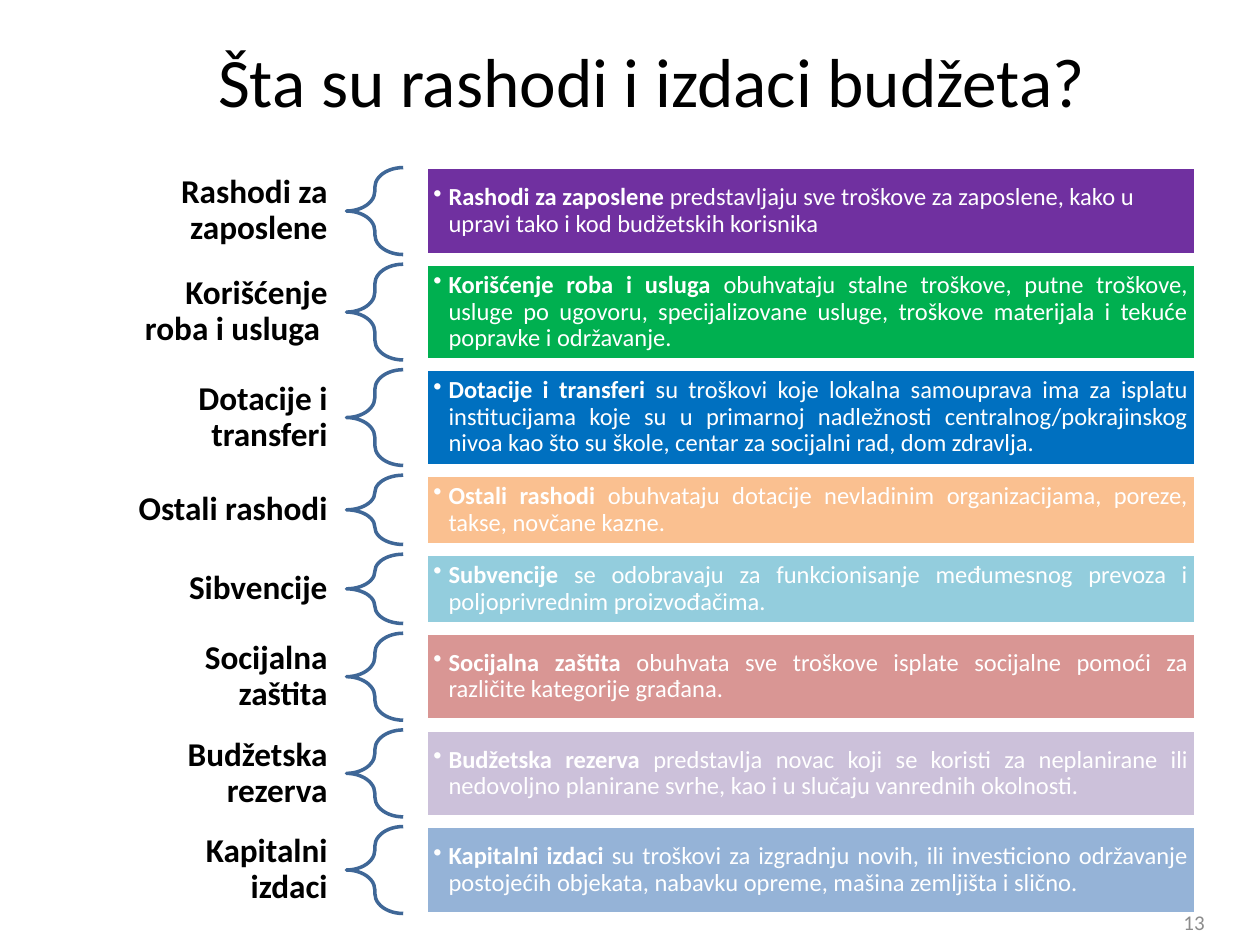
from dataclasses import dataclass

from lxml.etree import SubElement
from pptx import Presentation
from pptx.dml.color import RGBColor
from pptx.enum.shapes import MSO_SHAPE
from pptx.enum.text import MSO_ANCHOR, MSO_AUTO_SIZE, PP_ALIGN
from pptx.oxml.ns import qn
from pptx.util import Inches, Pt


@dataclass(frozen=True)
class Theme:
    font: str = "Calibri"
    ink: str = "000000"
    paper: str = "FFFFFF"
    brace: str = "3F6797"
    muted: str = "8C8C8C"
    title_size: float = 39.6
    label_size: float = 19
    body_size: float = 14
    number_size: float = 12
    line_width: float = 2


TALL, TALLER, SHORT = 0.69, 0.76, 0.55
LABEL_HEIGHT, ONE_LINE_LABEL_HEIGHT = 0.69, 0.41
ROWS_TOP, ROWS_BOTTOM = 1.33, 7.25
LABEL_LEFT, LABEL_WIDTH = 0.5, 2.25
BRACE_LEFT, BRACE_WIDTH = 2.75, 0.45
BAND_LEFT, BAND_WIDTH = 3.38, 6.11

# label, band height, band colour, alignment, bold term, explanation
EXPENSES = [
    ("Rashodi za zaposlene", TALL, "7030A0", PP_ALIGN.LEFT, "Rashodi za zaposlene",
     "predstavljaju sve troškove za zaposlene, kako u upravi tako i kod "
     "budžetskih korisnika"),
    ("Korišćenje\vroba i usluga ", TALLER, "00B050", PP_ALIGN.JUSTIFY,
     "Korišćenje roba i usluga",
     "obuhvataju stalne troškove, putne troškove, usluge po ugovoru, "
     "specijalizovane usluge, troškove materijala i tekuće popravke i održavanje."),
    ("Dotacije i transferi", TALLER, "0070C0", PP_ALIGN.JUSTIFY, "Dotacije i transferi",
     "su troškovi koje lokalna samouprava ima za isplatu institucijama koje su u "
     "primarnoj nadležnosti centralnog/pokrajinskog nivoa kao što su škole, "
     "centar za socijalni rad, dom zdravlja."),
    ("Ostali rashodi", SHORT, "FAC090", PP_ALIGN.JUSTIFY, "Ostali rashodi",
     "obuhvataju dotacije nevladinim organizacijama, poreze, takse, novčane kazne."),
    ("Sibvencije", SHORT, "93CDDD", PP_ALIGN.JUSTIFY, "Subvencije",
     "se odobravaju za funkcionisanje međumesnog prevoza i "
     "poljoprivrednim proizvođačima."),
    ("Socijalna\vzaštita", TALL, "D99694", PP_ALIGN.JUSTIFY, "Socijalna zaštita",
     "obuhvata sve troškove isplate socijalne pomoći za različite "
     "kategorije građana."),
    ("Budžetska rezerva", TALL, "CCC1DA", PP_ALIGN.JUSTIFY, "Budžetska rezerva",
     "predstavlja novac koji se koristi za neplanirane ili nedovoljno planirane "
     "svrhe, kao i u slučaju vanrednih okolnosti."),
    ("Kapitalni\vizdaci", TALL, "95B3D7", PP_ALIGN.JUSTIFY, "Kapitalni izdaci",
     "su troškovi za izgradnju novih, ili investiciono održavanje postojećih "
     "objekata, nabavku opreme, mašina zemljišta i slično."),
]


class SlideBuilder:
    def __init__(self, slide, theme):
        self.slide = slide
        self.theme = theme

    def _font(self, font, size, color, bold=False):
        values = {"name": self.theme.font, "size": Pt(size), "bold": bold}
        for attribute, value in values.items():
            setattr(font, attribute, value)
        font.color.rgb = RGBColor.from_string(color)

    def _frame(self, frame, side, edge):
        """Centre the text vertically, with side and top/bottom insets in inches."""
        values = {
            "word_wrap": True,
            "auto_size": MSO_AUTO_SIZE.NONE,
            "vertical_anchor": MSO_ANCHOR.MIDDLE,
            "margin_left": Inches(side),
            "margin_right": Inches(side),
            "margin_top": Inches(edge),
            "margin_bottom": Inches(edge),
        }
        for attribute, value in values.items():
            setattr(frame, attribute, value)

    def _shape(self, kind, box, line_color):
        shape = self.slide.shapes.add_shape(kind, *map(Inches, box))
        shape.shadow.inherit = False
        shape.line.color.rgb = RGBColor.from_string(line_color)
        shape.line.width = Pt(self.theme.line_width)
        return shape

    def title(self, text, box):
        title = self.slide.shapes.title
        for side, length in zip(("left", "top", "width", "height"), box):
            setattr(title, side, Inches(length))
        self._frame(title.text_frame, 0.1, 0.05)
        title.text_frame.text = text
        paragraph = title.text_frame.paragraphs[0]
        paragraph.alignment = PP_ALIGN.CENTER
        self._font(paragraph.runs[0].font, self.theme.title_size, self.theme.ink)

    def right_text(self, text, box, size, color, bold=False, inset=0.1, spacing=1.0):
        frame = self.slide.shapes.add_textbox(*map(Inches, box)).text_frame
        self._frame(frame, inset, 0.05)
        frame.text = text
        paragraph = frame.paragraphs[0]
        paragraph.alignment = PP_ALIGN.RIGHT
        paragraph.line_spacing = spacing
        for run in paragraph.runs:
            self._font(run.font, size, color, bold)

    def brace(self, box):
        brace = self._shape(MSO_SHAPE.LEFT_BRACE, box, self.theme.brace)
        brace.fill.background()
        brace.adjustments[0] = 0.35
        brace.adjustments[1] = 0.5

    def band(self, box, color, alignment, term, explanation):
        band = self._shape(MSO_SHAPE.RECTANGLE, box, self.theme.paper)
        band.fill.solid()
        band.fill.fore_color.rgb = RGBColor.from_string(color)
        self._frame(band.text_frame, 0.06, 0.06)
        paragraph = band.text_frame.paragraphs[0]
        paragraph.alignment = alignment
        paragraph.line_spacing = 0.9
        self._bullet(paragraph)
        for text, bold in ((term + " ", True), (explanation, False)):
            run = paragraph.add_run()
            run.text = text
            self._font(run.font, self.theme.body_size, self.theme.paper, bold)

    def _bullet(self, paragraph):
        properties = paragraph._p.get_or_add_pPr()
        indent = Inches(0.12)
        properties.set("marL", str(indent))
        properties.set("indent", str(-indent))
        SubElement(properties, qn("a:buChar")).set("char", "•")


def main():
    presentation = Presentation()
    presentation.slide_width, presentation.slide_height = Inches(10), Inches(7.5)
    theme = Theme()
    title_only = presentation.slide_layouts[5]
    builder = SlideBuilder(presentation.slides.add_slide(title_only), theme)
    builder.title("Šta su rashodi i izdaci budžeta?", (0.67, 0.29, 9, 0.68))

    heights = [height for _, height, *_ in EXPENSES]
    gap = (ROWS_BOTTOM - ROWS_TOP - sum(heights)) / (len(heights) - 1)
    top = ROWS_TOP
    for label, height, color, alignment, term, explanation in EXPENSES:
        label_height = ONE_LINE_LABEL_HEIGHT if height == SHORT else LABEL_HEIGHT
        label_top = top + (height - label_height) / 2
        builder.right_text(label, (LABEL_LEFT, label_top, LABEL_WIDTH, label_height),
                           theme.label_size, theme.ink, bold=True, inset=0.15,
                           spacing=0.9)
        builder.brace((BRACE_LEFT, top, BRACE_WIDTH, height))
        builder.band((BAND_LEFT, top, BAND_WIDTH, height),
                     color, alignment, term, explanation)
        top += height + gap

    builder.right_text("13", (7.33, 7.12, 2.33, 0.4), theme.number_size, theme.muted)
    presentation.save("out.pptx")


if __name__ == "__main__":
    main()
